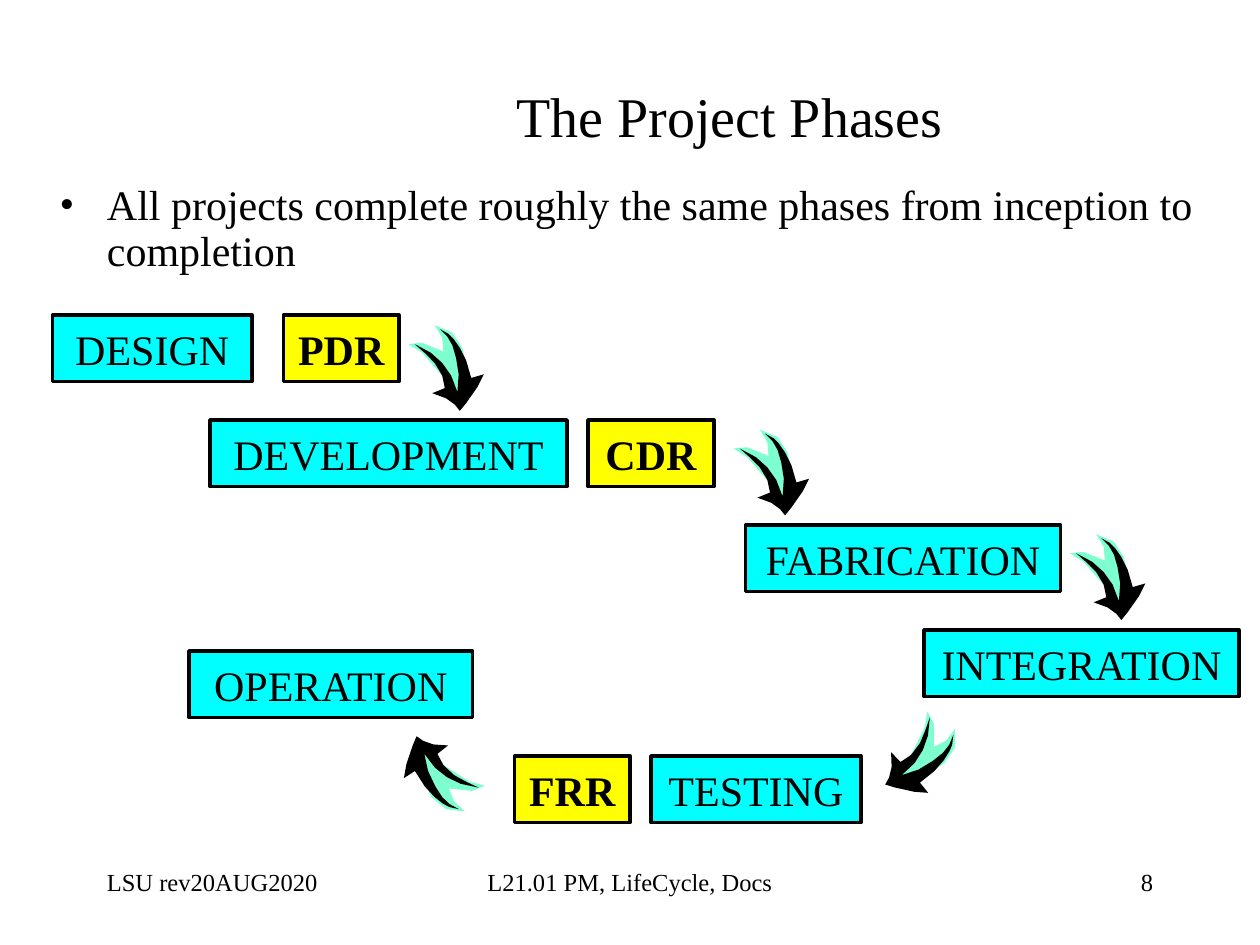
import math

import pptx
import pptx.dml.color
import pptx.enum.shapes
import pptx.enum.text
import pptx.oxml
import pptx.oxml.ns
import pptx.util

Pt = pptx.util.Pt
ALIGN = pptx.enum.text.PP_ALIGN
ANCHOR = pptx.enum.text.MSO_ANCHOR
RECT = pptx.enum.shapes.MSO_SHAPE.RECTANGLE

FONT = "Times New Roman"
BLACK, CYAN, YELLOW, MINT = "000000", "00FFFF", "FFFF00", "7DFFCF"
BOX_HEIGHT = 38

TITLE = "The Project Phases"
BULLET = "All projects complete roughly the same phases from inception to completion"

# text, left, width, alignment
FOOTERS = [
    ("LSU rev20AUG2020", 54, 150, ALIGN.LEFT),
    ("L21.01 PM, LifeCycle, Docs", 246, 228, ALIGN.CENTER),
    ("8", 516, 150, ALIGN.RIGHT),
]

# text, left, top, width
PHASES = [
    ("OPERATION", 108, 372, 162),
    ("DESIGN", 30, 180, 114),
    ("DEVELOPMENT", 120, 240, 204),
    ("FABRICATION", 426, 300, 180),
    ("INTEGRATION", 528, 360, 180),
    ("TESTING", 372, 432, 120),
]
REVIEWS = [
    ("PDR", 162, 180, 66),
    ("CDR", 336, 240, 72),
    ("FRR", 294, 432, 66),
]

# centre x, centre y, clockwise turn in degrees
ARROWS = [
    (255.6, 207.4, 0),
    (441.4, 267.1, 0),
    (633.6, 326.9, 0),
    (528.5, 431.3, 67.7),
    (252.7, 445, 163.7),
]

# outlines around the arrow's centre
ARROW_BODY = [
    (-14.4, -11.5), (-2.2, -6.5), (-2.9, -14.4), (-7.2, -21.6), (2.9, -17.3),
    (8.6, -8.6), (13, 11.5), (5.8, 21.6), (-3.6, 6.5), (-14.4, -5.8),
    (-22.3, -10.8),
]
ARROW_SHADE = [
    (-18.7, -10.8), (-9.4, -5.8), (-2.9, 0), (2.2, 7.2), (5.8, 16.6),
    (6.5, 6.5), (5, -2.9), (2.9, -10.1), (0, -15.1), (-4.3, -19.4),
    (0.7, -16.6), (3.6, -13.7), (7.2, -8.6), (10.8, -1.4), (13.7, 8.6),
    (20.9, 6.5), (17.3, 13.7), (10.8, 23), (7.2, 27.4), (4.3, 23.8),
    (-0.7, 20.2), (-8.6, 17.3), (-1.4, 14.4), (-2.9, 7.2), (-7.2, 0),
    (-13, -5.8),
]


def rgb(value):
    return pptx.dml.color.RGBColor.from_string(value)


def place(sp, left, top, width, height):
    box = dict(left=left, top=top, width=width, height=height)
    for name, value in box.items():
        setattr(sp, name, Pt(value))


def write(sp, text, size, align, anchor=ANCHOR.TOP, bold=False):
    tf = sp.text_frame
    tf.word_wrap = True
    tf.vertical_anchor = anchor
    p = tf.paragraphs[0]
    p.alignment = align
    r = p.add_run()
    r.text = text
    for name, value in dict(name=FONT, size=Pt(size), bold=bold).items():
        setattr(r.font, name, value)
    r.font.color.rgb = rgb(BLACK)
    return p


def add_text(s, text, left, top, width, height, size, align):
    sp = s.shapes.add_textbox(0, 0, 0, 0)
    place(sp, left, top, width, height)
    return write(sp, text, size, align)


def fill(sp, color):
    sp.shadow.inherit = False
    sp.fill.solid()
    sp.fill.fore_color.rgb = rgb(color)


def add_box(s, text, left, top, width, color, bold):
    sp = s.shapes.add_shape(RECT, Pt(left), Pt(top), Pt(width), Pt(BOX_HEIGHT))
    fill(sp, color)
    sp.line.color.rgb = rgb(BLACK)
    sp.line.width = Pt(2)
    write(sp, text, 24, ALIGN.CENTER, ANCHOR.MIDDLE, bold)


def add_outline(s, points, cx, cy, turn, color):
    cos, sin = math.cos(math.radians(turn)), math.sin(math.radians(turn))
    turned = [(Pt(cx + x * cos - y * sin), Pt(cy + x * sin + y * cos))
              for x, y in points]
    builder = s.shapes.build_freeform(*turned[0])
    builder.add_line_segments(turned[1:], close=True)
    sp = builder.convert_to_shape()
    fill(sp, color)
    sp.line.fill.background()


def add_bullet(p, indent):
    pPr = p._p.get_or_add_pPr()
    pPr.set("marL", str(Pt(indent)))
    pPr.set("indent", str(-Pt(indent)))
    ns = pptx.oxml.ns.nsdecls("a")
    pPr.append(pptx.oxml.parse_xml(f'<a:buFont {ns} typeface="{FONT}"/>'))
    pPr.append(pptx.oxml.parse_xml(f'<a:buChar {ns} char="•"/>'))


def main():
    prs = pptx.Presentation()
    prs.slide_width, prs.slide_height = Pt(720), Pt(540)
    s = prs.slides.add_slide(prs.slide_layouts[5])

    place(s.shapes.title, 168, 48, 498, 36)
    write(s.shapes.title, TITLE, 32, ALIGN.CENTER, ANCHOR.MIDDLE)

    p = add_text(s, BULLET, 27, 102, 666, 60, 24, ALIGN.LEFT)
    add_bullet(p, 27)
    p.line_spacing = 0.9

    for text, left, width, align in FOOTERS:
        add_text(s, text, left, 492, width, 36, 14, align)
    for phase in PHASES:
        add_box(s, *phase, CYAN, False)
    for review in REVIEWS:
        add_box(s, *review, YELLOW, True)
    for arrow in ARROWS:
        add_outline(s, ARROW_BODY, *arrow, MINT)
        add_outline(s, ARROW_SHADE, *arrow, BLACK)

    prs.save("out.pptx")


if __name__ == "__main__":
    main()
